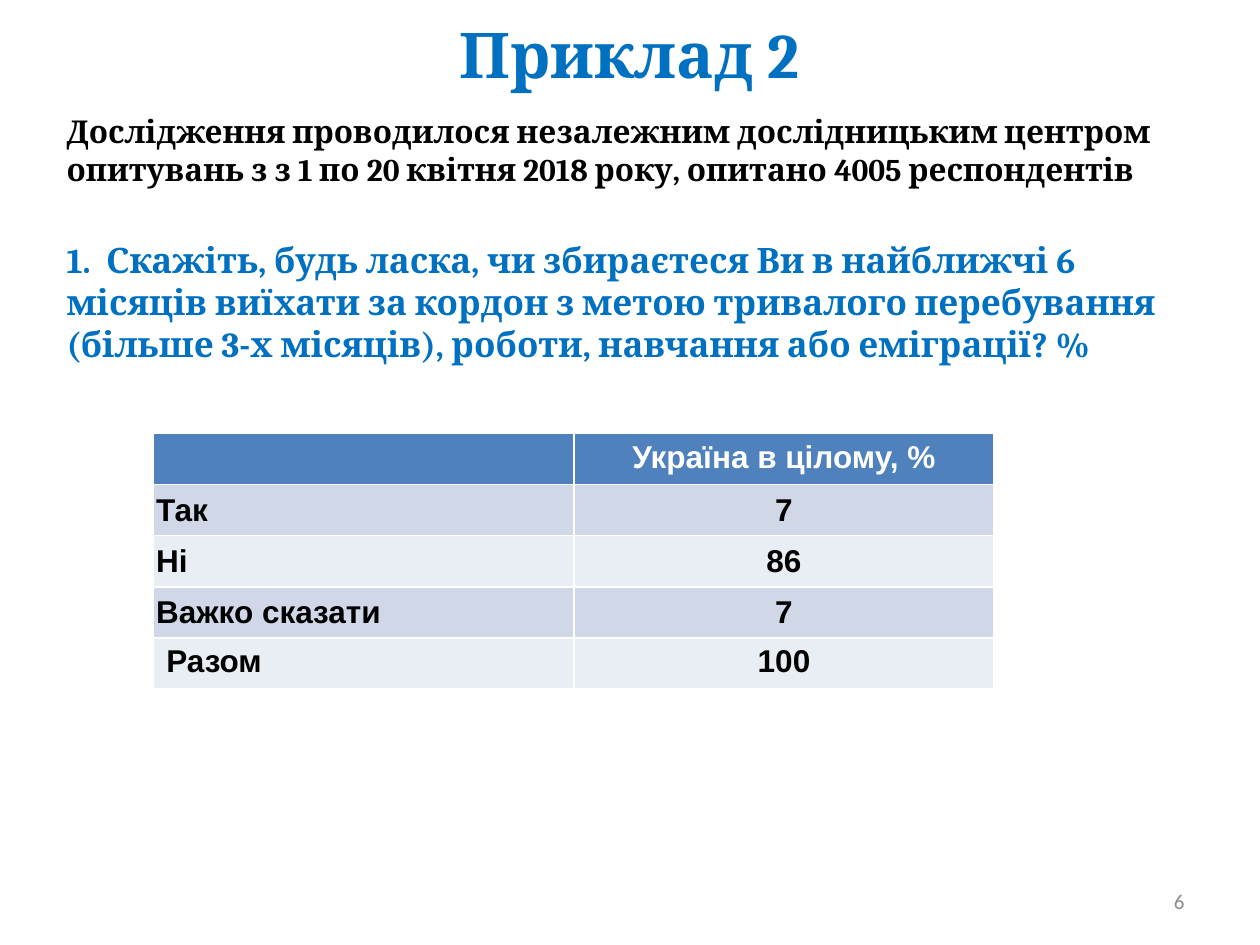
from dataclasses import dataclass

from pptx import Presentation
from pptx.dml.color import RGBColor
from pptx.enum import text
from pptx.util import Inches, Pt


@dataclass(frozen=True)
class Theme:
    serif: str = "Cambria"
    sans: str = "Arial"
    number_font: str = "Calibri"
    blue: str = "0070C0"
    black: str = "000000"
    white: str = "FFFFFF"
    grey: str = "8C8C8C"
    header: str = "4F81BD"
    bands: tuple = ("D0D8E8", "E9EDF4")
    title_size: int = 36
    question_size: int = 20
    text_size: int = 18
    number_size: int = 12


theme = Theme()


def style(para, name, size, color, bold=True, align=text.PP_ALIGN.LEFT):
    para.alignment = align
    para.font.name = name
    para.font.size = Pt(size)
    para.font.bold = bold
    para.font.color.rgb = RGBColor.from_string(color)


def add_text_box(slide, left, top, width, height):
    box = slide.shapes.add_textbox(Inches(left), Inches(top), Inches(width), Inches(height))
    box.text_frame.word_wrap = True
    return box.text_frame


deck = Presentation()
deck.slide_width, deck.slide_height = Inches(10), Inches(7.5)
slide = deck.slides.add_slide(deck.slide_layouts[5])

# Title
title = slide.shapes.title
title.left, title.top = Inches(0.9), Inches(0)
title.width, title.height = Inches(8.19), Inches(0.84)
title.text_frame.text = "Приклад 2"
title.text_frame.vertical_anchor = text.MSO_ANCHOR.MIDDLE
style(title.text_frame.paragraphs[0], theme.serif, theme.title_size, theme.blue,
      align=text.PP_ALIGN.CENTER)

# Survey description and question
body = add_text_box(slide, 0.43, 0.84, 9.07, 6.22)
survey = body.paragraphs[0]
survey.text = ("Дослідження проводилося незалежним дослідницьким центром опитувань "
               "з з 1 по 20 квітня 2018 року, опитано 4005 респондентів")
style(survey, theme.serif, theme.text_size, theme.black)
question = body.add_paragraph()
question.text = ("1.  Скажіть, будь ласка, чи збираєтеся Ви в найближчі 6 місяців "
                 "виїхати за кордон з метою тривалого перебування "
                 "(більше 3-х місяців), роботи, навчання або еміграції? %")
question.space_before = Pt(29)
style(question, theme.serif, theme.question_size, theme.blue)

# Slide number
number = add_text_box(slide, 7.17, 6.95, 2.33, 0.4)
number.vertical_anchor = text.MSO_ANCHOR.MIDDLE
number.text = "6"
style(number.paragraphs[0], theme.number_font, theme.number_size, theme.grey,
      bold=False, align=text.PP_ALIGN.RIGHT)

# Answers
answers = [
    ("", "Україна в цілому, %"),
    ("Так", "7"),
    ("Ні", "86"),
    ("Важко сказати", "7"),
    ("Разом", "100"),
]
last = len(answers) - 1
table = slide.shapes.add_table(len(answers), 2, Inches(1.22), Inches(3.44),
                               Inches(6.67), Inches(2.03)).table
for i, answer in enumerate(answers):
    is_header = i == 0
    fill = theme.header if is_header else theme.bands[(i - 1) % 2]
    for j, value in enumerate(answer):
        cell = table.cell(i, j)
        cell.fill.solid()
        cell.fill.fore_color.rgb = RGBColor.from_string(fill)
        if 0 < i < last:
            cell.vertical_anchor = text.MSO_ANCHOR.MIDDLE
            cell.margin_left = cell.margin_right = Inches(0.02)
            cell.margin_top = cell.margin_bottom = Inches(0.02)
        cell.text = value
        style(cell.text_frame.paragraphs[0], theme.sans, theme.text_size,
              theme.white if is_header else theme.black,
              align=text.PP_ALIGN.CENTER if j else text.PP_ALIGN.LEFT)

deck.save("out.pptx")
